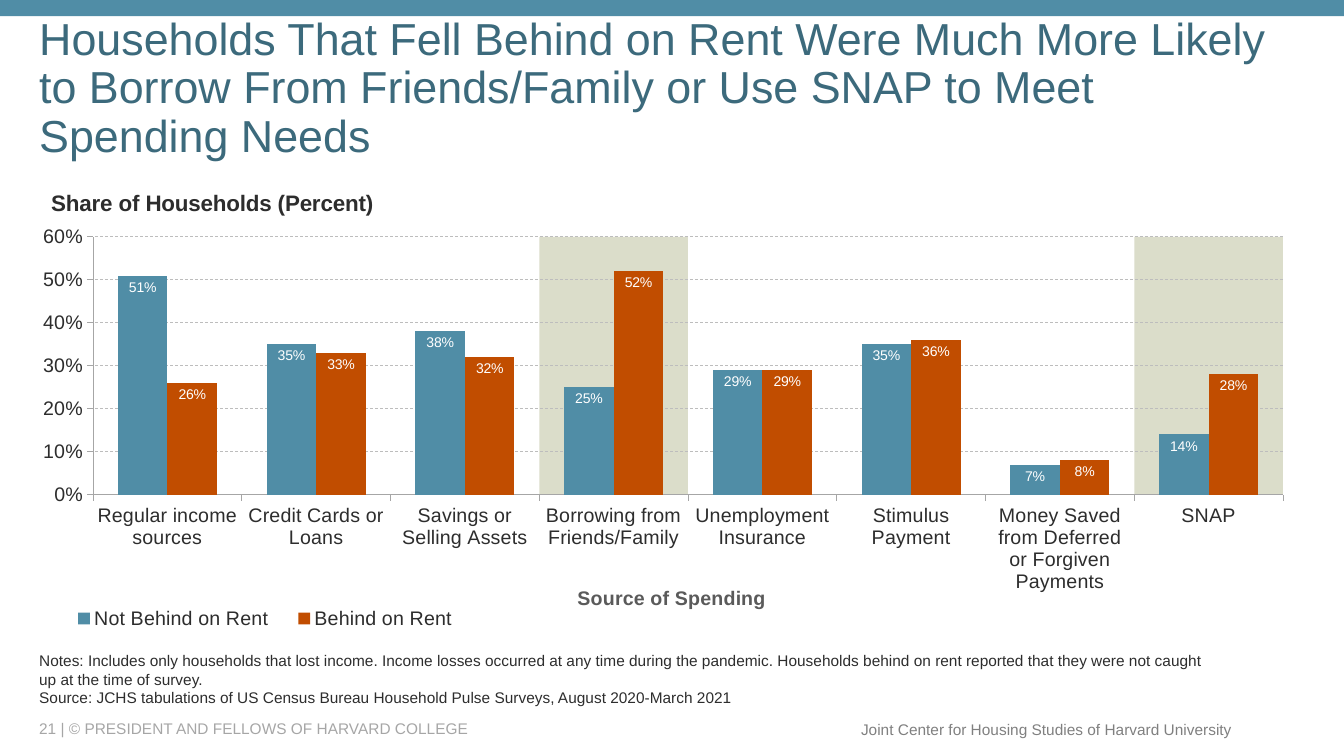
from dataclasses import dataclass

from lxml.etree import SubElement
from pptx import Presentation
from pptx.chart.data import CategoryChartData
from pptx.dml.color import RGBColor
from pptx.enum.chart import XL_CHART_TYPE as ChartType, XL_LABEL_POSITION as LabelPosition
from pptx.enum.chart import XL_LEGEND_POSITION as LegendPosition, XL_TICK_MARK as TickMark
from pptx.enum.dml import MSO_LINE as Dash
from pptx.enum.shapes import MSO_SHAPE as ShapeType
from pptx.enum.text import MSO_ANCHOR as Anchor, PP_ALIGN as Align
from pptx.oxml import parse_xml
from pptx.oxml.ns import nsdecls, qn
from pptx.util import Inches, Pt

FONT = "Arial"
COLORS = {
    "teal": "508DA6", "orange": "C14D00", "highlight": "DBDDCA", "title": "3C6A7C",
    "ink": "2D2D2D", "axis_title": "5A5A5A", "axis": "A6A6A6", "grid": "BDBDBD",
    "footer": "808080", "white": "FFFFFF",
}
CHART_LEFT, CHART_TOP, CHART_WIDTH, CHART_HEIGHT = 0.29, 1.72, 12.65, 4.6
PLOT = (0.05, 0.137, 0.933, 0.556)
CATEGORIES = [
    "Regular income sources", "Credit Cards or Loans", "Savings or Selling Assets",
    "Borrowing from Friends/Family", "Unemployment Insurance", "Stimulus Payment",
    "Money Saved from Deferred or Forgiven Payments", "SNAP",
]
HIGHLIGHTED = ["Borrowing from Friends/Family", "SNAP"]


@dataclass
class Series:
    name: str
    color: str
    values: list[float]


@dataclass
class TextBlock:
    box: tuple[float, float, float, float]
    lines: list[str]
    size: float
    color: str
    anchor: Anchor = Anchor.MIDDLE
    align: Align = Align.LEFT
    wrap: bool = True
    line_spacing: float = 1.0


SERIES = [
    Series("Not Behind on Rent", "teal", [0.51, 0.35, 0.38, 0.25, 0.29, 0.35, 0.07, 0.14]),
    Series("Behind on Rent", "orange", [0.26, 0.33, 0.32, 0.52, 0.29, 0.36, 0.08, 0.28]),
]
TEXTS = [
    TextBlock((0.29, 7.13, 7.92, 0.2), ["21 | © PRESIDENT AND FELLOWS OF HARVARD COLLEGE"],
              11, "axis"),
    TextBlock((8.42, 7.09, 3.9, 0.29), ["Joint Center for Housing Studies of Harvard University"],
              11, "footer", align=Align.RIGHT, wrap=False),
    TextBlock((0.29, 0.4, 12.65, 0.97),
              ["Households That Fell Behind on Rent Were Much More Likely to Borrow From "
               "Friends/Family or Use SNAP to Meet Spending Needs"],
              32, "title", line_spacing=0.9),
    TextBlock((0.29, 6.48, 11.75, 0.58),
              ["Notes: Includes only households that lost income. Income losses occurred at any "
               "time during the pandemic. Households behind on rent reported that they were not "
               "caught up at the time of survey.",
               "Source: JCHS tabulations of US Census Bureau Household Pulse Surveys, "
               "August 2020-March 2021"],
              11, "ink", anchor=Anchor.BOTTOM),
]


def rgb(name: str) -> RGBColor:
    return RGBColor.from_string(COLORS[name])


def style_font(font, size: float, color: str, bold: bool = False) -> None:
    font.name, font.size, font.bold = FONT, Pt(size), bold
    font.color.rgb = rgb(color)


def add_rectangle(slide, left: float, top: float, width: float, height: float, color: str) -> None:
    shape = slide.shapes.add_shape(
        ShapeType.RECTANGLE, Inches(left), Inches(top), Inches(width), Inches(height))
    shape.shadow.inherit = False
    shape.fill.solid()
    shape.fill.fore_color.rgb = rgb(color)
    shape.line.fill.background()


def add_text(slide, block: TextBlock) -> None:
    frame = slide.shapes.add_textbox(*map(Inches, block.box)).text_frame
    frame.word_wrap = block.wrap
    frame.vertical_anchor = block.anchor
    frame.text = "\n".join(block.lines)
    for paragraph in frame.paragraphs:
        paragraph.alignment = block.align
        paragraph.line_spacing = block.line_spacing
        style_font(paragraph.font, block.size, block.color)


def set_layout(element, index: int, *values: float, inner: bool = False) -> None:
    """Place a chart part by fractions of the chart: x, y and, if given, width and height."""
    for old in element.findall(qn("c:layout")):
        element.remove(old)
    layout = parse_xml(f"<c:layout {nsdecls('c')}><c:manualLayout/></c:layout>")
    entries = [("layoutTarget", "inner")] if inner else []
    entries += [("xMode", "edge"), ("yMode", "edge"), *zip("xywh", values)]
    for tag, value in entries:
        SubElement(layout[0], qn(f"c:{tag}")).set("val", str(value))
    element.insert(index, layout)


def clear_backgrounds(chart) -> None:
    """Let the highlight bands show through the chart."""
    no_fill = (f"<c:spPr {nsdecls('c', 'a')}><a:noFill/>"
               "<a:ln><a:noFill/></a:ln></c:spPr>")
    chart.element.find(qn("c:chart")).addnext(parse_xml(no_fill))
    chart.element.xpath("c:chart/c:plotArea")[0].append(parse_xml(no_fill))


def set_title(title, text: str, size: float, color: str) -> None:
    title.text_frame.text = text
    style_font(title.text_frame.paragraphs[0].font, size, color, bold=True)


def style_axis(axis) -> None:
    axis.major_tick_mark, axis.minor_tick_mark = TickMark.OUTSIDE, TickMark.NONE
    style_font(axis.tick_labels.font, 14, "ink")
    axis.format.line.color.rgb = rgb("axis")
    axis.format.line.width = Pt(0.5)


def add_spending_chart(slide) -> None:
    data = CategoryChartData(number_format="0%")
    data.categories = CATEGORIES
    for series in SERIES:
        data.add_series(series.name, series.values)
    chart = slide.shapes.add_chart(
        ChartType.COLUMN_CLUSTERED, Inches(CHART_LEFT), Inches(CHART_TOP),
        Inches(CHART_WIDTH), Inches(CHART_HEIGHT), data).chart
    style_font(chart.font, 10, "axis_title")
    set_title(chart.chart_title, "Share of Households (Percent)", 16, "ink")

    category_axis, value_axis = chart.category_axis, chart.value_axis
    style_axis(category_axis)
    style_axis(value_axis)
    set_title(category_axis.axis_title, "Source of Spending", 14, "axis_title")
    value_axis.minimum_scale, value_axis.maximum_scale, value_axis.major_unit = 0, 0.6, 0.1
    value_axis.tick_labels.number_format = "0%"
    value_axis.tick_labels.number_format_is_linked = False
    grid_line = value_axis.major_gridlines.format.line
    grid_line.color.rgb = rgb("grid")
    grid_line.width = Pt(0.5)
    grid_line.dash_style = Dash.DASH

    plot = chart.plots[0]
    plot.gap_width, plot.overlap, plot.vary_by_categories = 100, 0, False
    for bars, series in zip(plot.series, SERIES):
        bars.format.fill.solid()
        bars.format.fill.fore_color.rgb = rgb(series.color)
        labels = bars.data_labels
        labels.show_value = True
        labels.position = LabelPosition.INSIDE_END
        labels.number_format, labels.number_format_is_linked = "0%", False
        style_font(labels.font, 10, "white")

    chart.has_legend = True
    chart.legend.position = LegendPosition.BOTTOM
    chart.legend.include_in_layout = False
    style_font(chart.legend.font, 14, "ink")

    root = chart.element
    set_layout(root.xpath("c:chart/c:title")[0], 1, 0.014, 0.025)
    set_layout(root.xpath(".//c:catAx/c:title")[0], 1, 0.427, 0.88)
    set_layout(root.xpath("c:chart/c:legend")[0], 1, 0.02, 0.92, 0.33, 0.08)
    set_layout(root.xpath("c:chart/c:plotArea")[0], 0, *PLOT, inner=True)
    clear_backgrounds(chart)


def main() -> None:
    presentation = Presentation()
    presentation.slide_width, presentation.slide_height = Inches(13.33), Inches(7.5)
    slide = presentation.slides.add_slide(presentation.slide_layouts[6])

    add_rectangle(slide, 0, 0, 13.33, 0.16, "teal")
    plot_left = CHART_LEFT + PLOT[0] * CHART_WIDTH
    band_width = PLOT[2] * CHART_WIDTH / len(CATEGORIES)
    for category in HIGHLIGHTED:
        left = plot_left + CATEGORIES.index(category) * band_width
        add_rectangle(slide, left, CHART_TOP + PLOT[1] * CHART_HEIGHT,
                      band_width, PLOT[3] * CHART_HEIGHT, "highlight")
    for block in TEXTS:
        add_text(slide, block)
    add_spending_chart(slide)
    presentation.save("out.pptx")


if __name__ == "__main__":
    main()
